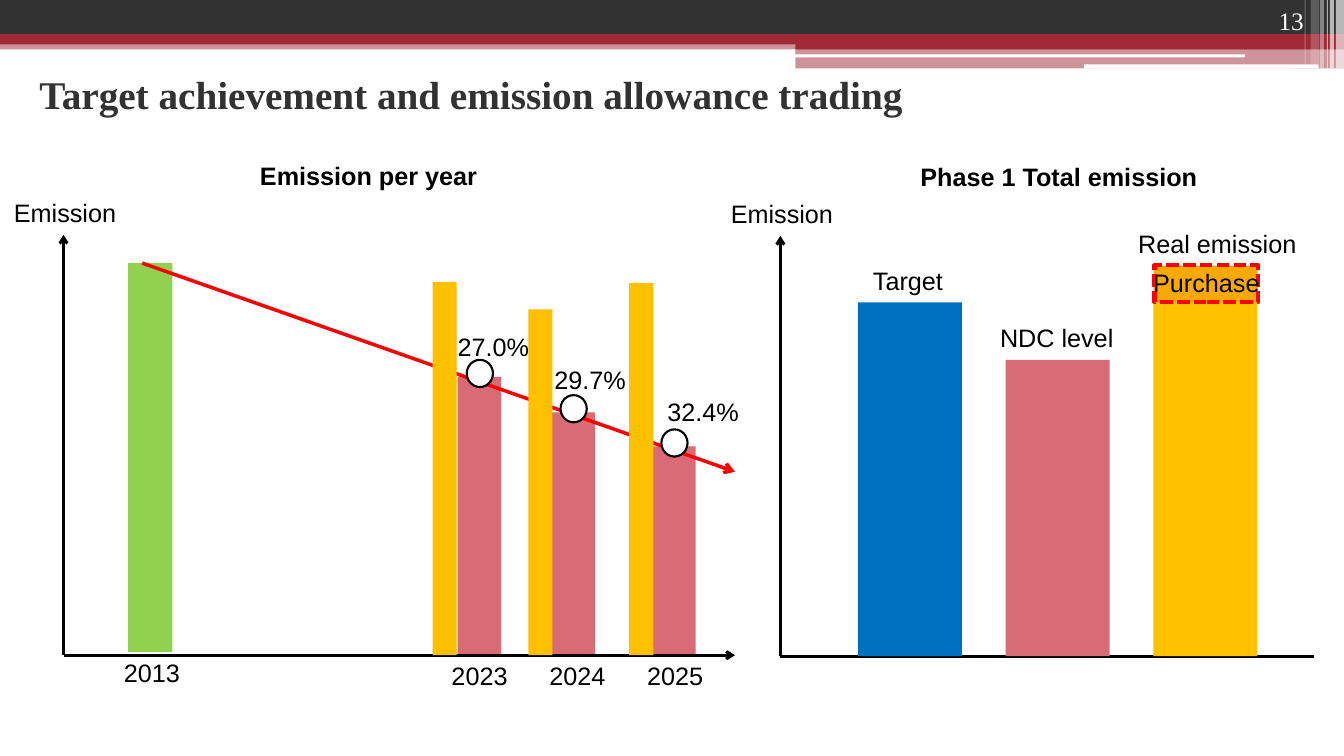
from dataclasses import dataclass

from lxml import etree
from pptx import Presentation
from pptx.dml.color import RGBColor
from pptx.enum.dml import MSO_LINE
from pptx.enum.shapes import MSO_CONNECTOR, MSO_SHAPE
from pptx.enum.text import MSO_ANCHOR, MSO_AUTO_SIZE, PP_ALIGN
from pptx.oxml.ns import qn
from pptx.util import Inches, Pt

RECT, ROUNDED, OVAL = MSO_SHAPE.RECTANGLE, MSO_SHAPE.ROUNDED_RECTANGLE, MSO_SHAPE.OVAL
STRAIGHT, DASHED = MSO_CONNECTOR.STRAIGHT, MSO_LINE.SQUARE_DOT
LEFT, CENTER, RIGHT = PP_ALIGN.LEFT, PP_ALIGN.CENTER, PP_ALIGN.RIGHT
TOP, MIDDLE, BOTTOM = MSO_ANCHOR.TOP, MSO_ANCHOR.MIDDLE, MSO_ANCHOR.BOTTOM
GROW = MSO_AUTO_SIZE.SHAPE_TO_FIT_TEXT
TITLE_ONLY = 5


@dataclass(frozen=True)
class Theme:
    dark: str = "323232"
    crimson: str = "9F2936"
    white: str = "FFFFFF"
    black: str = "000000"
    red: str = "FF0000"
    green: str = "92D050"
    blue: str = "0070C0"
    pink: str = "D96B77"
    yellow: str = "FFC000"
    orange: str = "F07F09"
    heading_font: str = "Times New Roman"
    label_font: str = "Arial"
    title_size: int = 28
    label_size: int = 18


THEME = Theme()


@dataclass(frozen=True)
class Box:
    """A region in grid cells; one cell is a tenth of an inch."""
    left: float
    top: float
    width: float
    height: float

    def inner(self, left, top, width, height):
        return Box(self.left + left, self.top + top, width, height)

    def bar(self, left, width, height):
        return self.inner(left, self.height - height, width, height)

    def lengths(self):
        return [cells(n) for n in (self.left, self.top, self.width, self.height)]


def cells(count):
    return Inches(count / 10)


def add_block(page, box, color, kind=RECT, opacity=100, line=None, line_width=0):
    block = page.shapes.add_shape(kind, *box.lengths())
    block.shadow.inherit = False
    block.fill.solid()
    block.fill.fore_color.rgb = RGBColor.from_string(color)
    if opacity < 100:
        tint = block.fill._xPr.find(".//" + qn("a:srgbClr"))
        etree.SubElement(tint, qn("a:alpha")).set("val", str(opacity * 1000))
    if line:
        block.line.color.rgb = RGBColor.from_string(line)
        block.line.width = Pt(line_width)
    else:
        block.line.fill.background()
    return block


def add_line(page, box, start, end, color, width, arrow=True):
    points = [cells(n) for x, y in (start, end) for n in (box.left + x, box.top + y)]
    line = page.shapes.add_connector(STRAIGHT, *points)
    line.line.color.rgb = RGBColor.from_string(color)
    line.line.width = Pt(width)
    properties = line._element.spPr
    if arrow:
        etree.SubElement(properties.find(qn("a:ln")), qn("a:tailEnd")).set("type", "arrow")
    etree.SubElement(properties, qn("a:effectLst"))


def write(frame, words, size, font, color, bold=False, align=LEFT, anchor=TOP):
    frame.word_wrap = True
    frame.vertical_anchor = anchor
    para = frame.paragraphs[0]
    para.alignment = align
    span = para.add_run()
    span.text = words
    span.font.size, span.font.name, span.font.bold = Pt(size), font, bold
    span.font.color.rgb = RGBColor.from_string(color)


def add_label(page, box, words, left, top, width=21.4, bold=False, align=LEFT):
    label = page.shapes.add_textbox(*box.inner(left, top, width, 4).lengths())
    write(label.text_frame, words, THEME.label_size, THEME.label_font,
          THEME.black, bold, align)
    label.text_frame.auto_size = GROW


def draw_banner(page, box):
    # Bands: left, top, width, height, colour, opacity
    for *place, color, opacity in (
            (0, 4, 133.3, 0.9, THEME.crimson, 50),
            (0, 0, 133.3, 3.4, THEME.dark, 100),
            (0, 3.4, 133.3, 1, THEME.crimson, 100),
            (78.9, 3.9, 54.4, 1, THEME.crimson, 100),
            (78.9, 4.8, 54.4, 2, THEME.crimson, 50)):
        add_block(page, box.inner(*place), color, opacity=opacity)
    # White cut-outs
    for place in ((78.8, 5.4, 44.7, 0.3), (107.5, 6.4, 23.3, 0.4)):
        add_block(page, box.inner(*place), THEME.white, ROUNDED)
    # Vertical stripes: left, width, height, opacity
    for left, width, height, opacity in (
            (132.5, 0.8, 6.8, 65), (131.9, 0.4, 6.8, 65), (131.6, 0.1, 6.8, 60),
            (130.9, 0.4, 6.8, 40), (130, 0.8, 6.4, 20), (129.4, 0.1, 6.4, 30)):
        add_block(page, box.inner(left, 0, width, height), THEME.white, opacity=opacity)
    # Page number
    number = page.shapes.add_textbox(*box.inner(119.2, 0, 11.1, 4).lengths())
    write(number.text_frame, "13", THEME.label_size, THEME.heading_font,
          THEME.white, align=RIGHT, anchor=BOTTOM)


def draw_title(page, box, words):
    title = page.shapes.title
    title.left, title.top, title.width, title.height = box.lengths()
    write(title.text_frame, words, THEME.title_size, THEME.heading_font,
          THEME.dark, True, anchor=MIDDLE)


def draw_axes(page, box, heading, heading_left, arrow):
    origin = (0, box.height)
    add_line(page, box, origin, (0, 0), THEME.black, 2)
    add_line(page, box, origin, (box.width, box.height), THEME.black, 2, arrow)
    add_label(page, box, "Emission", -5.9, -4.2)
    add_label(page, box, heading, heading_left, -7.9, 30.9, True)


def draw_yearly(page, box):
    # Year, share, target left and height, real left and height, share left and top
    years = (("2023", "27.0%", 39.1, 27.6, 36.6, 37, 38.1, 9.1),
             ("2024", "29.7%", 48.4, 24.1, 46.1, 34.3, 47.7, 12.4),
             ("2025", "32.4%", 58.4, 20.7, 56.1, 36.9, 58.9, 15.5))
    # Target bars behind the axes and the trend
    for _, _, left, height, *_ in years:
        add_block(page, box.bar(left, 4.3, height), THEME.pink)
    draw_axes(page, box, "Emission per year", 18.5, True)
    # Base year and trend
    add_block(page, box.inner(6.4, 2.8, 4.4, 38.6), THEME.green)
    add_label(page, box, "2013", 5, box.height - 0.3)
    add_line(page, box, (7.8, 2.8), (box.width, 23.5), THEME.red, 2.5)
    # Markers, real emission bars and labels
    for index, (year, share, left, height, real_left, real_height,
                share_left, share_top) in enumerate(years):
        marker = box.inner(left + 0.9, box.height - height - 1.7, 2.6, 2.7)
        add_block(page, marker, THEME.white, OVAL, line=THEME.black, line_width=1.5)
        add_block(page, box.bar(real_left, 2.4, real_height), THEME.yellow)
        add_label(page, box, year, 37.5 + 9.7 * index, box.height)
        add_label(page, box, share, share_left, share_top)


def draw_total(page, box):
    draw_axes(page, box, "Phase 1 Total emission", 12.9, False)
    # Bars: name, height, colour, label left
    bars = (("Target", 35.1, THEME.blue, 8.2),
            ("NDC level", 29.4, THEME.pink, 20.8),
            ("Real emission", 38.7, THEME.yellow, 34.5))
    for index, (name, height, color, label_left) in enumerate(bars):
        add_block(page, box.bar(7.7 + 14.65 * index, 10.3, height), color)
        add_label(page, box, name, label_left, box.height - height - 4.2)
    # Purchased allowance
    purchase = add_block(page, box.inner(37.1, 2.9, 10.3, 3.7), THEME.orange,
                         opacity=34, line=THEME.red, line_width=3)
    purchase.line.dash_style = DASHED
    add_label(page, box, "Purchase", 35.2, 2.6, 14.1, align=CENTER)


def main():
    deck = Presentation()
    deck.slide_width, deck.slide_height = Inches(13.33), Inches(7.5)
    page = deck.slides.add_slide(deck.slide_layouts[TITLE_ONLY])
    draw_banner(page, Box(0, 0, 133.3, 6.8))
    draw_title(page, Box(2.9, 3.5, 120, 11.7),
               "Target achievement and emission allowance trading")
    draw_yearly(page, Box(6.3, 23.3, 66.6, 41.7))
    draw_total(page, Box(77.4, 23.4, 52.9, 41.7))
    deck.save("out.pptx")


if __name__ == "__main__":
    main()
